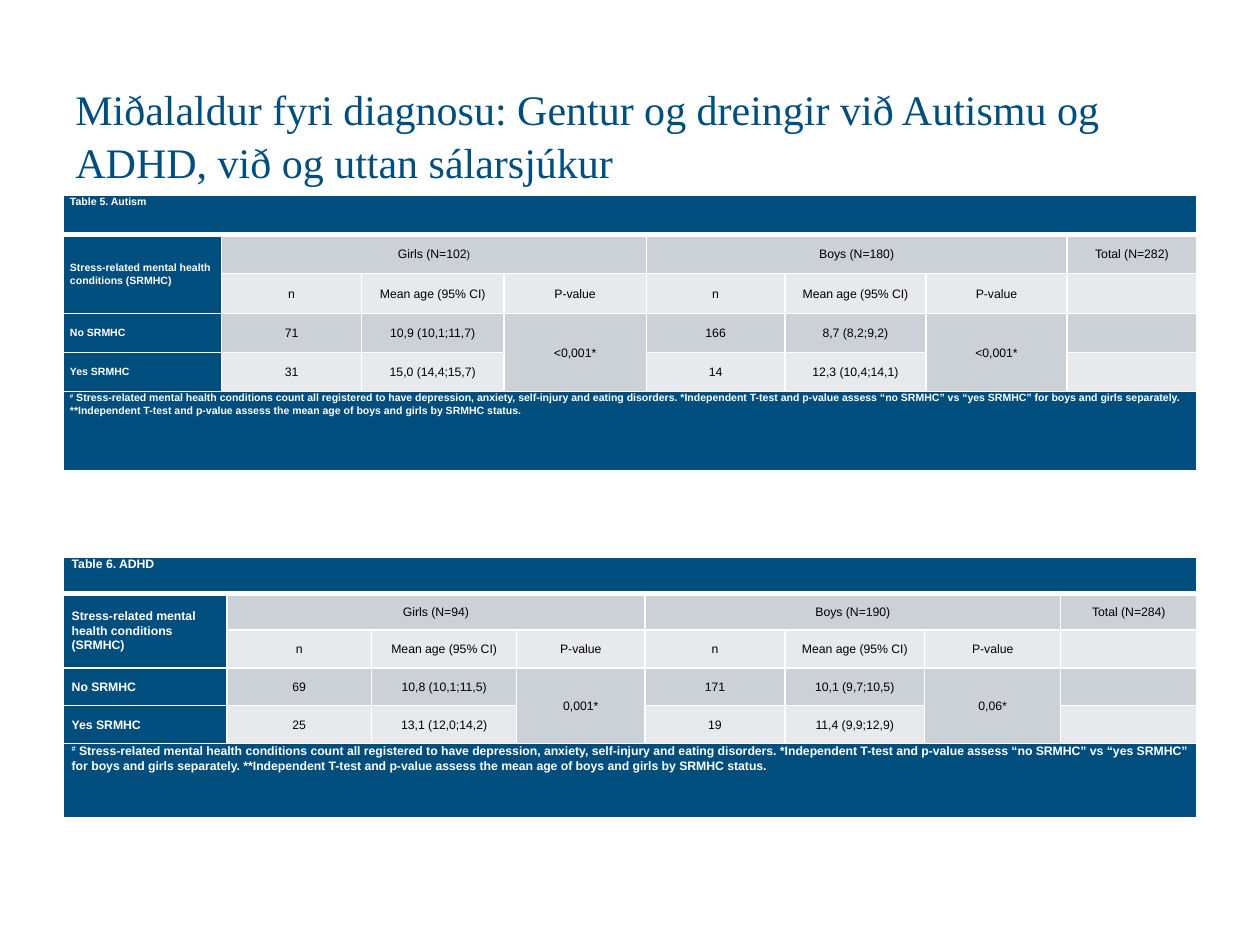
"""Build a slide with two tables of mean age at diagnosis."""
from lxml import etree
from pptx import Presentation
from pptx.dml.color import RGBColor
from pptx.enum.text import MSO_ANCHOR, PP_ALIGN
from pptx.oxml.ns import qn
from pptx.util import Pt

LEFT, CENTER = PP_ALIGN.LEFT, PP_ALIGN.CENTER
TOP, MIDDLE = MSO_ANCHOR.TOP, MSO_ANCHOR.MIDDLE

COLORS = {"navy": "004E7D", "dark": "CCD0D7", "light": "E7E9EC",
          "white": "FFFFFF", "black": "000000"}
TITLE = ("Miðalaldur fyri diagnosu: Gentur og dreingir við Autismu og ADHD, "
         "við og uttan sálarsjúkur")
TOPIC = "Stress-related mental health conditions (SRMHC)"
HEADS = ["n", "Mean age (95% CI)", "P-value"]
NOTE = [("#", {"base": 30}),
        (" Stress-related mental health conditions count all registered to have "
         "depression, anxiety, self-injury and eating disorders. *Independent T-test "
         "and p-value assess “no SRMHC” vs “yes SRMHC” for boys and girls separately. "
         "**Independent T-test and p-value assess the mean age of boys and girls by "
         "SRMHC status.", {})]
TABLES = [
    {"name": "Table 6. ADHD", "top": 318.2, "size": 7, "inset": 5,
     "cols": [93.6, 82.8, 82.8, 73.4, 79.9, 79.9, 77.8, 77.8],
     "rows": [20.9, 20.9, 21.6, 20.9, 20.9, 42.5],
     "groups": ["Girls (N=94)", "Boys (N=190)", "Total (N=284)"],
     "no": ["69", "10,8 (10,1;11,5)", "0,001*", "171", "10,1 (9,7;10,5)", "0,06*"],
     "yes": ["25", "13,1 (12,0;14,2)", "", "19", "11,4 (9,9;12,9)", ""]},
    {"name": "Table 5. Autism", "top": 111.6, "size": 6, "inset": 4,
     "cols": [90.7, 79.9, 81.4, 81.4, 79.2, 80.6, 80.6, 74.2],
     "rows": [22.3, 22.3, 23, 22.3, 22.3, 45.4],
     "groups": [[("Girls (N=102", {}), (")", {"size": 6})],
                "Boys (N=180)", "Total (N=282)"],
     "no": ["71", "10,9 (10,1;11,7)", "<0,001*", "166", "8,7 (8,2;9,2)", "<0,001*"],
     "yes": ["31", "15,0 (14,4;15,7)", "", "14", "12,3 (10,4;14,1)", ""]},
]
MERGES = [(0, 0, 0, 7), (1, 0, 2, 0), (1, 1, 1, 3), (1, 4, 1, 6),
          (3, 3, 4, 3), (3, 6, 4, 6), (5, 0, 5, 7)]


def rgb(name):
    return RGBColor.from_string(COLORS[name])


def write(frame, parts, size=7, font="Arial", color="black", bold=False,
          align=LEFT, line=1.07, after=8):
    para = frame.paragraphs[0]
    para.alignment, para.line_spacing, para.space_after = align, line, Pt(after)
    for words, extra in [(parts, {})] if isinstance(parts, str) else parts:
        run = para.add_run()
        run.text = words
        run.font.name, run.font.bold = font, bold
        run.font.size = Pt(extra.get("size", size))
        run.font.color.rgb = rgb(color)
        if "base" in extra:
            run.font.bold = bold
            run._r.get_or_add_rPr().set("baseline", str(extra["base"] * 1000))


def edge(cell, row):
    props = cell._tc.get_or_add_tcPr()
    for side in "LRTB":
        thick = (row, side) in ((0, "B"), (1, "T"))
        line = etree.SubElement(props, qn(f"a:ln{side}"), w=str(Pt(3 if thick else 1)))
        fill = etree.SubElement(line, qn("a:solidFill"))
        etree.SubElement(fill, qn("a:srgbClr"), val=COLORS["white"])


def build(slide, data):
    cols, rows = data["cols"], data["rows"]
    girls, boys, total = data["groups"]
    body = [
        [data["name"]] + [""] * 7,
        [TOPIC, girls, "", "", boys, "", "", total],
        ["", *HEADS, *HEADS, ""],
        ["No SRMHC", *data["no"], ""],
        ["Yes SRMHC", *data["yes"], ""],
        [NOTE] + [""] * 7,
    ]
    table = slide.shapes.add_table(len(rows), len(cols), Pt(36), Pt(data["top"]),
                                   Pt(sum(cols)), Pt(sum(rows))).table
    table.first_row = table.horz_banding = False
    for col, width in zip(table.columns, cols):
        col.width = Pt(width)
    for row, height in zip(table.rows, rows):
        row.height = Pt(height)
    for r, line in enumerate(body):
        for c, parts in enumerate(line):
            cell = table.cell(r, c)
            band = r in (0, 5)
            label = band or c == 0
            edge(cell, r)
            cell.fill.solid()
            cell.fill.fore_color.rgb = rgb("navy" if label else "dark" if r % 2 else "light")
            cell.margin_left = cell.margin_right = Pt(data["inset"])
            cell.margin_top = cell.margin_bottom = 0
            cell.vertical_anchor = TOP if band else MIDDLE
            write(cell.text_frame, parts, size=data["size"] if label else 7, bold=label,
                  color="white" if label else "black", align=LEFT if label else CENTER)
    for r, c, low, right in MERGES:
        table.cell(r, c).merge(table.cell(low, right))


def main():
    deck = Presentation()
    deck.slide_width, deck.slide_height = Pt(720), Pt(540)
    slide = deck.slides.add_slide(deck.slide_layouts[6])
    frame = slide.shapes.add_textbox(Pt(36), Pt(41), Pt(648), Pt(70.6)).text_frame
    frame.word_wrap, frame.vertical_anchor = True, MIDDLE
    write(frame, TITLE, size=24, font="Times New Roman", color="navy", line=1.05, after=0)
    for data in TABLES:
        build(slide, data)
    deck.save("out.pptx")


if __name__ == "__main__":
    main()
